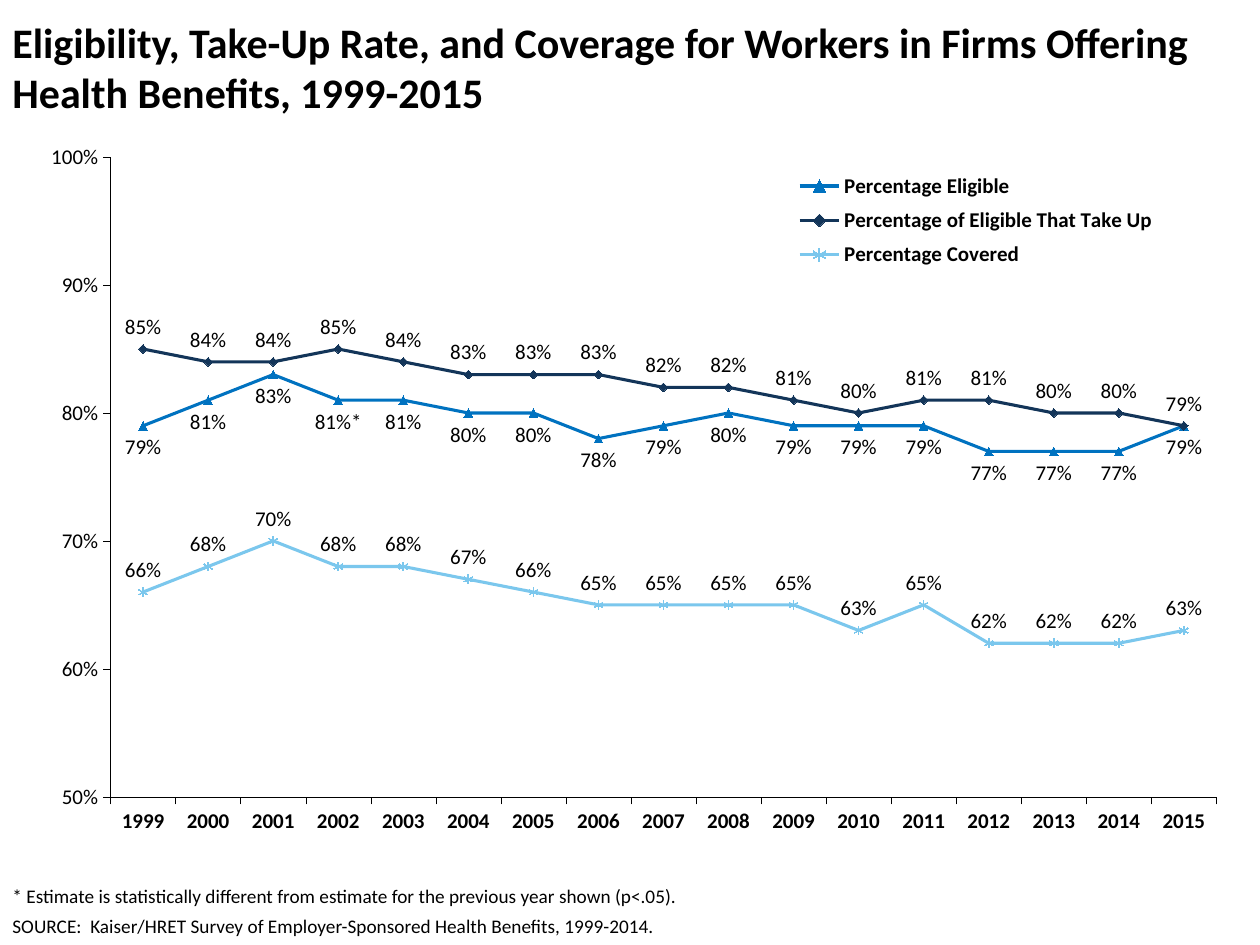
from lxml import etree
from pptx import Presentation
from pptx.chart.data import CategoryChartData
from pptx.dml.color import RGBColor
from pptx.enum.chart import (XL_CHART_TYPE, XL_LABEL_POSITION, XL_LEGEND_POSITION,
                             XL_MARKER_STYLE, XL_TICK_MARK)
from pptx.oxml.ns import qn
from pptx.util import Inches, Pt

ABOVE, BELOW = XL_LABEL_POSITION.ABOVE, XL_LABEL_POSITION.BELOW
TRIANGLE, DIAMOND, STAR = (XL_MARKER_STYLE.TRIANGLE, XL_MARKER_STYLE.DIAMOND,
                           XL_MARKER_STYLE.STAR)
OUTSIDE = XL_TICK_MARK.OUTSIDE
FONT, BLACK = "Calibri", "000000"

TITLE = ("Eligibility, Take-Up Rate, and Coverage for Workers in Firms Offering "
         "Health Benefits, 1999-2015")
NOTES = [
    "* Estimate is statistically different from estimate for the previous year shown (p<.05).",
    "SOURCE:  Kaiser/HRET Survey of Employer-Sponsored Health Benefits, 1999-2014.",
]
YEARS = [str(year) for year in range(1999, 2016)]
# name, colour, marker, label position, percentages by year
SERIES = [
    ("Percentage Eligible", "0072C0", TRIANGLE, BELOW,
     [79, 81, 83, 81, 81, 80, 80, 78, 79, 80, 79, 79, 79, 77, 77, 77, 79]),
    ("Percentage of Eligible That Take Up", "133559", DIAMOND, ABOVE,
     [85, 84, 84, 85, 84, 83, 83, 83, 82, 82, 81, 80, 81, 81, 80, 80, 79]),
    ("Percentage Covered", "7BC7ED", STAR, ABOVE,
     [66, 68, 70, 68, 68, 67, 66, 65, 65, 65, 65, 63, 65, 62, 62, 62, 63]),
]
STARRED = {"Percentage Eligible": {"2002": "81%*"}}
PLOT_AREA = (0.07, 0.03, 0.92, 0.91)
LEGEND_AREA = (0.63, 0.04, 0.32, 0.16)


def color(code):
    return RGBColor.from_string(code)


def style(font, size=12, bold=False):
    font.name, font.size, font.bold = FONT, Pt(size), bold
    font.color.rgb = color(BLACK)


def add_text(slide, lines, box, size, bold=False, after=0):
    frame = slide.shapes.add_textbox(*map(Inches, box)).text_frame
    frame.word_wrap = True
    for i, line in enumerate(lines):
        para = frame.paragraphs[0] if i == 0 else frame.add_paragraph()
        para.space_after = Pt(after)
        run = para.add_run()
        run.text = line
        style(run.font, size, bold)


def place(part, area, inner=False):
    """Set a manual layout, in fractions of the chart."""
    layout = part.find(qn("c:layout"))
    if layout is None:
        layout = etree.Element(qn("c:layout"))
        before = part.find(qn("c:legendPos"))
        if before is None:
            part.insert(0, layout)
        else:
            before.addnext(layout)
    manual = etree.SubElement(layout, qn("c:manualLayout"))
    items = [("layoutTarget", "inner")] if inner else []
    items += [("xMode", "edge"), ("yMode", "edge"), *zip("xywh", area)]
    for tag, value in items:
        etree.SubElement(manual, qn("c:" + tag)).set("val", str(value))


def style_axis(axis, bold):
    axis.has_major_gridlines = False
    axis.major_tick_mark = OUTSIDE
    axis.format.line.color.rgb = color(BLACK)
    axis.format.line.width = Pt(0.25)
    style(axis.tick_labels.font, bold=bold)


def style_series(series, code, marker, spot):
    series.smooth = False
    series.format.line.color.rgb = color(code)
    series.format.line.width = Pt(1.75)
    series.marker.style, series.marker.size = marker, 5
    look = series.marker.format
    look.fill.solid()
    look.fill.fore_color.rgb = color(code)
    look.line.color.rgb = color(code)

    labels = series.data_labels
    labels.show_value, labels.position = True, spot
    labels.number_format, labels.number_format_is_linked = "0%", False
    style(labels.font)
    for year, text in STARRED.get(series.name, {}).items():
        label = series.points[YEARS.index(year)].data_label
        run = label.text_frame.paragraphs[0].add_run()
        run.text = text
        style(run.font)
        label.position = spot


def add_trend(slide):
    data = CategoryChartData(number_format="0%")
    data.categories = YEARS
    for name, *_, values in SERIES:
        data.add_series(name, [value / 100 for value in values])
    box = map(Inches, (0.21, 1.08, 9.54, 5.58))
    chart = slide.shapes.add_chart(XL_CHART_TYPE.LINE_MARKERS, *box, data).chart
    chart.has_title = False
    style(chart.font, 11, True)

    plot = chart.plots[0]
    plot.vary_by_categories = False
    for series, (_, code, marker, spot, _) in zip(plot.series, SERIES):
        style_series(series, code, marker, spot)

    style_axis(chart.category_axis, True)
    axis = chart.value_axis
    style_axis(axis, False)
    axis.minimum_scale, axis.maximum_scale, axis.major_unit = 0.5, 1, 0.1
    axis.tick_labels.number_format = "0%"
    axis.tick_labels.number_format_is_linked = False

    chart.has_legend = True
    legend = chart.legend
    legend.position = XL_LEGEND_POSITION.BOTTOM
    legend.include_in_layout = False
    style(legend.font, bold=True)
    root = chart.element
    place(root.find(".//" + qn("c:plotArea")), PLOT_AREA, inner=True)
    place(root.find(".//" + qn("c:legend")), LEGEND_AREA)


def main():
    deck = Presentation()
    deck.slide_width, deck.slide_height = Inches(10), Inches(7.5)
    slide = deck.slides.add_slide(deck.slide_layouts[6])
    add_trend(slide)
    add_text(slide, [TITLE], (0, 0.08, 9.58, 0.83), 24, bold=True)
    add_text(slide, NOTES, (0, 6.97, 9.25, 0.53), 11, after=4)
    deck.save("out.pptx")


if __name__ == "__main__":
    main()
